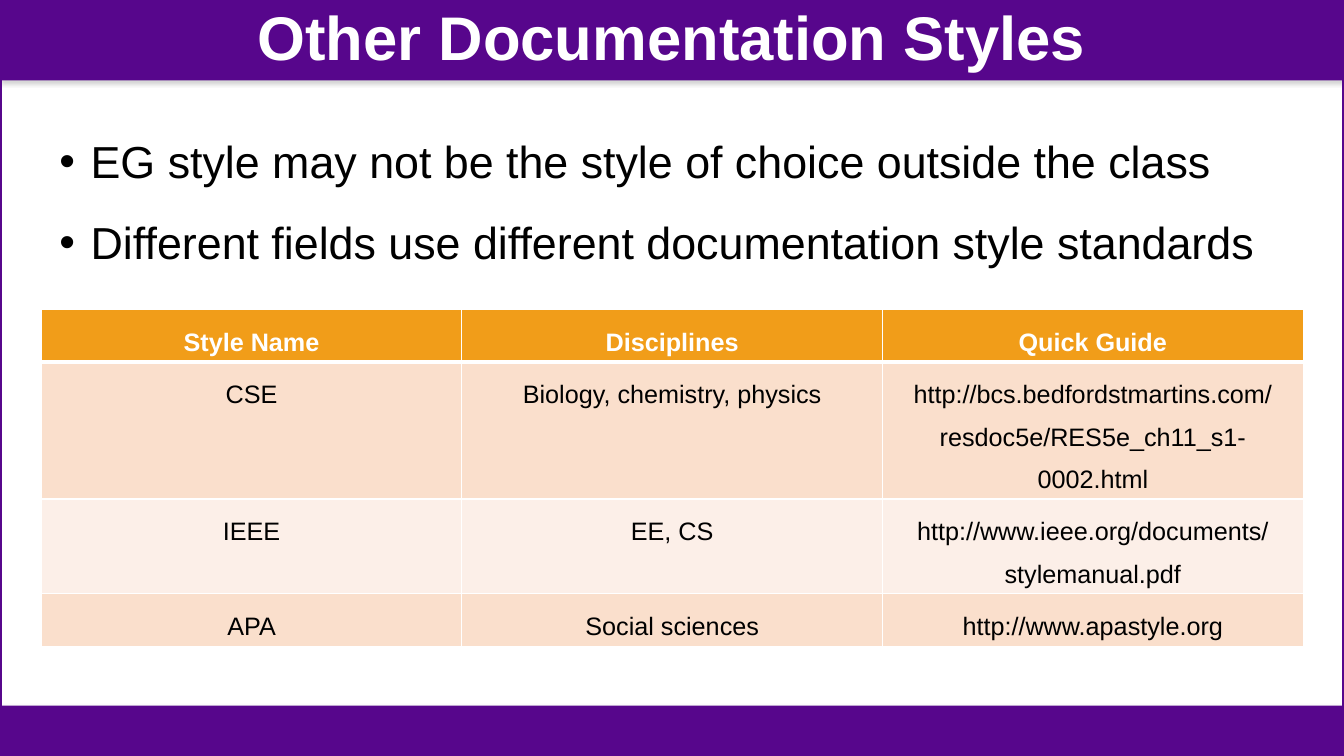
from lxml import etree
from pptx import Presentation
from pptx.dml.color import RGBColor
from pptx.enum.shapes import MSO_SHAPE
from pptx.enum.text import MSO_ANCHOR, MSO_AUTO_SIZE, PP_ALIGN
from pptx.oxml import parse_xml
from pptx.oxml.ns import nsdecls, qn
from pptx.util import Cm, Pt

RECTANGLE = MSO_SHAPE.RECTANGLE
MIDDLE = MSO_ANCHOR.MIDDLE
NO_AUTOFIT = MSO_AUTO_SIZE.NONE
GROW_SHAPE = MSO_AUTO_SIZE.SHAPE_TO_FIT_TEXT
CENTER, LEFT = PP_ALIGN.CENTER, PP_ALIGN.LEFT

# Content
TITLE = "Other Documentation Styles"
BULLETS = [
    "EG style may not be the style of choice outside the class",
    "Different fields use different documentation style standards",
]
STYLE_ROWS = [
    ("Style Name", "Disciplines", "Quick Guide"),
    ("CSE", "Biology, chemistry, physics",
     "http://bcs.bedfordstmartins.com/resdoc5e/RES5e_ch11_s1-0002.html"),
    ("IEEE", "EE, CS", "http://www.ieee.org/documents/stylemanual.pdf"),
    ("APA", "Social sciences", "http://www.apastyle.org"),
]
COLORS = {
    "purple": "57068C", "white": "FFFFFF", "black": "000000",
    "header": "F19D19", "odd_row": "FADFCC", "even_row": "FCEFE8",
    "shadow": "808080",
}
FONT = "Arial"

# Layout
SLIDE_WIDTH, SLIDE_HEIGHT = Cm(33.87), Cm(19.05)
HEADER_HEIGHT, FOOTER_HEIGHT = Cm(2.03), Cm(1.27)
TABLE_LEFT, TABLE_TOP = Cm(1.04), Cm(7.8)
TABLE_WIDTH, TABLE_HEIGHT, ROW_HEIGHT = Cm(31.8), Cm(7.87), Cm(1.04)
BULLET_INDENT = Cm(0.79)


def color(name):
    return RGBColor.from_string(COLORS[name])


def write_text(paragraph, text, size, color_name="black", bold=False,
               align=LEFT, spacing=1.5, bullet=False):
    if bullet:
        properties = paragraph._p.get_or_add_pPr()
        properties.set("marL", str(BULLET_INDENT))
        properties.set("indent", str(-BULLET_INDENT))
        etree.SubElement(properties, qn("a:buFont"), typeface=FONT)
        etree.SubElement(properties, qn("a:buChar"), char="•")
    paragraph.alignment = align
    paragraph.line_spacing = spacing
    paragraph.space_before = Pt(0)
    run = paragraph.add_run()
    run.text = text
    run.font.name = FONT
    run.font.size = Pt(size)
    run.font.bold = bold
    run.font.color.rgb = color(color_name)


def place(shape, left, top, width, height):
    shape.left, shape.top, shape.width, shape.height = left, top, width, height


def add_bar(slide, top, height):
    bar = slide.shapes.add_shape(RECTANGLE, 0, top, SLIDE_WIDTH, height)
    bar.fill.solid()
    bar.fill.fore_color.rgb = color("purple")
    bar.line.fill.background()
    bar._element.spPr.append(parse_xml(
        f'<a:effectLst {nsdecls("a")}><a:outerShdw blurRad="{Pt(3.1)}" '
        f'dist="{Pt(1.8)}" dir="5400000" rotWithShape="0">'
        f'<a:srgbClr val="{COLORS["shadow"]}"><a:alpha val="35000"/>'
        '</a:srgbClr></a:outerShdw></a:effectLst>'))


def add_borders(cell, top=1, bottom=1):
    properties = cell._tc.get_or_add_tcPr()
    for side, width in (("L", 1), ("R", 1), ("T", top), ("B", bottom)):
        properties.append(parse_xml(
            f'<a:ln{side} {nsdecls("a")} w="{Pt(width)}"><a:solidFill>'
            f'<a:srgbClr val="{COLORS["white"]}"/></a:solidFill></a:ln{side}>'))


def add_style_table(slide):
    frame = slide.shapes.add_table(len(STYLE_ROWS), len(STYLE_ROWS[0]),
                                   TABLE_LEFT, TABLE_TOP, TABLE_WIDTH, TABLE_HEIGHT)
    table = frame.table
    for row_index, values in enumerate(STYLE_ROWS):
        table.rows[row_index].height = ROW_HEIGHT
        is_header = row_index == 0
        fill_name = "header" if is_header else "odd_row" if row_index % 2 else "even_row"
        for column_index, value in enumerate(values):
            cell = table.cell(row_index, column_index)
            add_borders(cell, top=3 if row_index == 1 else 1,
                        bottom=3 if is_header else 1)
            cell.fill.solid()
            cell.fill.fore_color.rgb = color(fill_name)
            write_text(cell.text_frame.paragraphs[0], value, 18, bold=is_header,
                       color_name="white" if is_header else "black", align=CENTER)
    frame.height = TABLE_HEIGHT


def main():
    presentation = Presentation()
    presentation.slide_width, presentation.slide_height = SLIDE_WIDTH, SLIDE_HEIGHT
    slide = presentation.slides.add_slide(presentation.slide_layouts[1])
    title, body = slide.shapes.title, slide.placeholders[1]

    # Purple bars and slide border
    add_bar(slide, 0, HEADER_HEIGHT)
    border = slide.shapes.add_shape(RECTANGLE, 0, 0, SLIDE_WIDTH, SLIDE_HEIGHT)
    border.shadow.inherit = False
    border.fill.background()
    border.line.color.rgb = color("purple")
    border.line.width = Pt(2.25)
    add_bar(slide, SLIDE_HEIGHT - FOOTER_HEIGHT, FOOTER_HEIGHT)

    # Title, brought in front of the header bar
    slide.shapes._spTree.append(title._element)
    place(title, 0, 0, SLIDE_WIDTH, HEADER_HEIGHT)
    title.text_frame.auto_size = NO_AUTOFIT
    title.text_frame.vertical_anchor = MIDDLE
    write_text(title.text_frame.paragraphs[0], TITLE, 44, color_name="white",
               bold=True, align=CENTER, spacing=0.9)

    # Table of styles
    add_style_table(slide)

    # Bullet list, in front of the table
    slide.shapes._spTree.append(body._element)
    place(body, Cm(1.24), Cm(2.57), Cm(31.57), Cm(4.11))
    text_frame = body.text_frame
    text_frame.word_wrap = True
    text_frame.auto_size = GROW_SHAPE
    for index, text in enumerate(BULLETS):
        paragraph = text_frame.add_paragraph() if index else text_frame.paragraphs[0]
        write_text(paragraph, text, 32, bullet=True)

    presentation.save("out.pptx")


if __name__ == "__main__":
    main()
